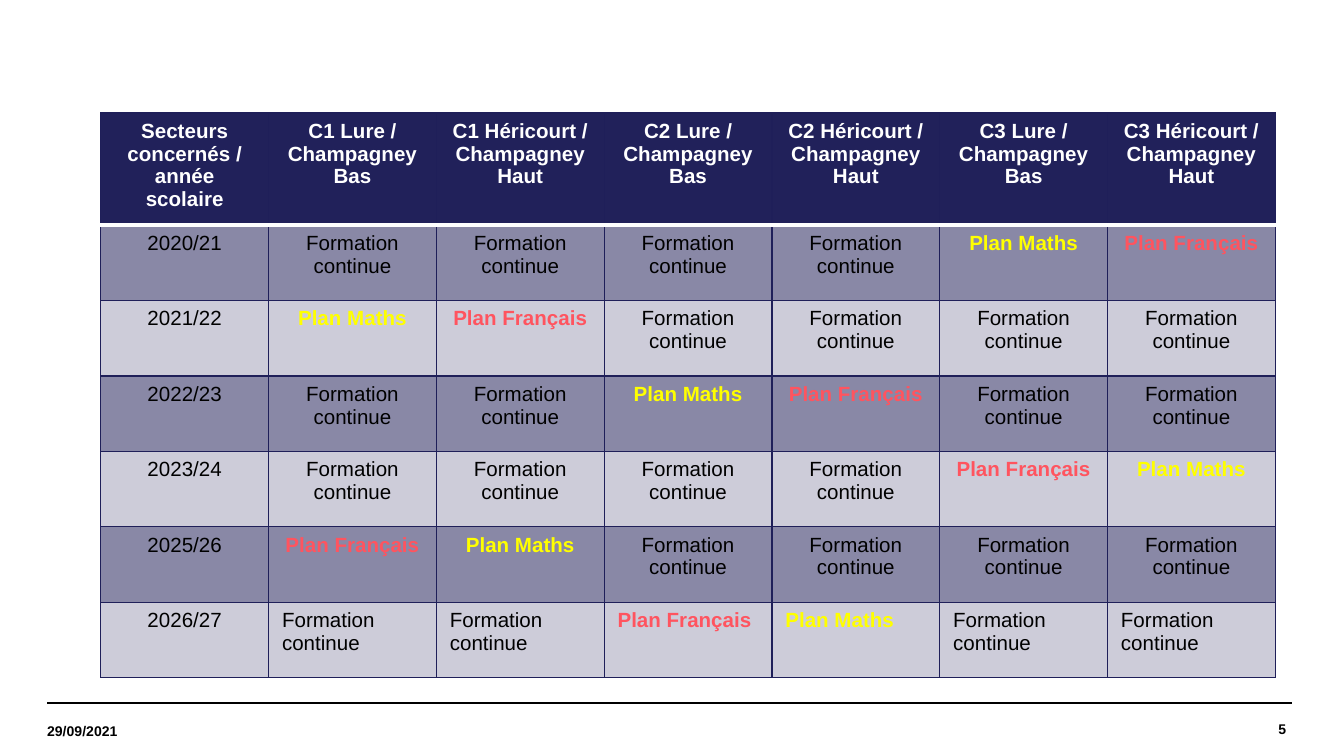
from lxml import etree
from pptx import Presentation
from pptx.dml.color import RGBColor
from pptx.enum.shapes import MSO_CONNECTOR
from pptx.enum.text import MSO_ANCHOR, PP_ALIGN
from pptx.oxml.ns import qn
from pptx.util import Inches, Pt

FONT = "Arial"
COLORS = {
    "black": "000000",
    "white": "FFFFFF",
    "header": "21215A",
    "border": "1F1F59",
    "dark_band": "8988A6",
    "light_band": "CDCCD9",
    "maths": "FFFF00",
    "french": "FF545F",
}

TRAINING, MATHS, FRENCH = "Formation continue", "Plan Maths", "Plan Français"
PLAN_COLORS = {MATHS: "maths", FRENCH: "french"}
HEADERS = ["Secteurs concernés / année scolaire"] + [
    f"{cycle} {sector}"
    for cycle in ("C1", "C2", "C3")
    for sector in ("Lure / Champagney Bas", "Héricourt / Champagney Haut")
]
# School year, column of the maths plan, column of the French plan
SCHEDULE = [
    ("2020/21", 5, 6),
    ("2021/22", 1, 2),
    ("2022/23", 3, 4),
    ("2023/24", 6, 5),
    ("2025/26", 2, 1),
    ("2026/27", 4, 3),
]


def rgb(name):
    return RGBColor.from_string(COLORS[name])


def format_text(paragraph, size, color, bold, align):
    paragraph.alignment = align
    font = paragraph.runs[0].font
    font.name, font.size, font.bold = FONT, Pt(size), bold
    font.color.rgb = rgb(color)


def set_borders(cell, sides="LRTB", **special):
    """Draw the given cell borders; special maps a side to (color, points)."""
    properties = cell._tc.get_or_add_tcPr()
    for index, side in enumerate(sides):
        color, width = special.get(side, ("border", 0.75))
        line = etree.Element(qn(f"a:ln{side}"), w=str(Pt(width)))
        fill = etree.SubElement(line, qn("a:solidFill"))
        etree.SubElement(fill, qn("a:srgbClr"), val=COLORS[color])
        properties.insert(index, line)


def fill_cell(cell, text, fill, color, bold, align=PP_ALIGN.CENTER):
    cell.text_frame.text = text
    format_text(cell.text_frame.paragraphs[0], 11, color, bold, align)
    cell.fill.solid()
    cell.fill.fore_color.rgb = rgb(fill)


def add_schedule(slide):
    rows, columns = len(SCHEDULE) + 1, len(HEADERS)
    header_height, body_height = Inches(0.82), Inches(3.37)
    frame = slide.shapes.add_table(rows, columns, Inches(0.75), Inches(0.84),
                                   Inches(8.74), header_height + body_height)
    table = frame.table
    for row_index, row in enumerate(table.rows):
        row.height = body_height // len(SCHEDULE) if row_index else header_height

    # Header row, with a white rule under it
    for column, header in enumerate(HEADERS):
        cell = table.cell(0, column)
        fill_cell(cell, header, "header", "white", True)
        set_borders(cell, B=("white", 2))

    # One banded row per school year; the last year's plans are left aligned
    for row_index, (year, maths, french) in enumerate(SCHEDULE, start=1):
        band = "dark_band" if row_index % 2 else "light_band"
        plans = {0: year, maths: MATHS, french: FRENCH}
        for column in range(columns):
            cell = table.cell(row_index, column)
            text = plans.get(column, TRAINING)
            left = row_index == len(SCHEDULE) and column > 0
            fill_cell(cell, text, band,
                      PLAN_COLORS.get(text, "black"), text in PLAN_COLORS,
                      PP_ALIGN.LEFT if left else PP_ALIGN.CENTER)
            set_borders(cell, "LRB" if row_index == 1 else "LRTB")


def add_rule(slide, left, right, top):
    line = slide.shapes.add_connector(MSO_CONNECTOR.STRAIGHT, Inches(left),
                                      Inches(top), Inches(right), Inches(top))
    line.line.color.rgb = rgb("black")
    line.line.width = Pt(0.8)
    etree.SubElement(line._element.spPr, qn("a:effectLst"))


def add_footer_text(slide, text, left, top, width, height, align):
    box = slide.shapes.add_textbox(Inches(left), Inches(top),
                                   Inches(width), Inches(height))
    frame = box.text_frame
    frame.word_wrap = True
    frame.vertical_anchor = MSO_ANCHOR.MIDDLE
    frame.margin_left = frame.margin_right = 0
    frame.margin_top = frame.margin_bottom = 0
    frame.text = text
    format_text(frame.paragraphs[0], 7.5, "black", True, align)


def main():
    # Widescreen slide, 16:9
    presentation = Presentation()
    presentation.slide_width = Inches(10)
    presentation.slide_height = Inches(10) * 9 // 16
    slide = presentation.slides.add_slide(presentation.slide_layouts[6])

    # Footer rules, page number and date
    for left in (0.35, 0.39):
        add_rule(slide, left, left + 9.22, 5.23)
    add_footer_text(slide, "5", 8.09, 5.23, 1.48, 0.39, PP_ALIGN.RIGHT)
    add_footer_text(slide, "29/09/2021", 0.35, 5.25, 1.28, 0.38, PP_ALIGN.LEFT)

    # Training schedule
    add_schedule(slide)
    presentation.save("out.pptx")


if __name__ == "__main__":
    main()
